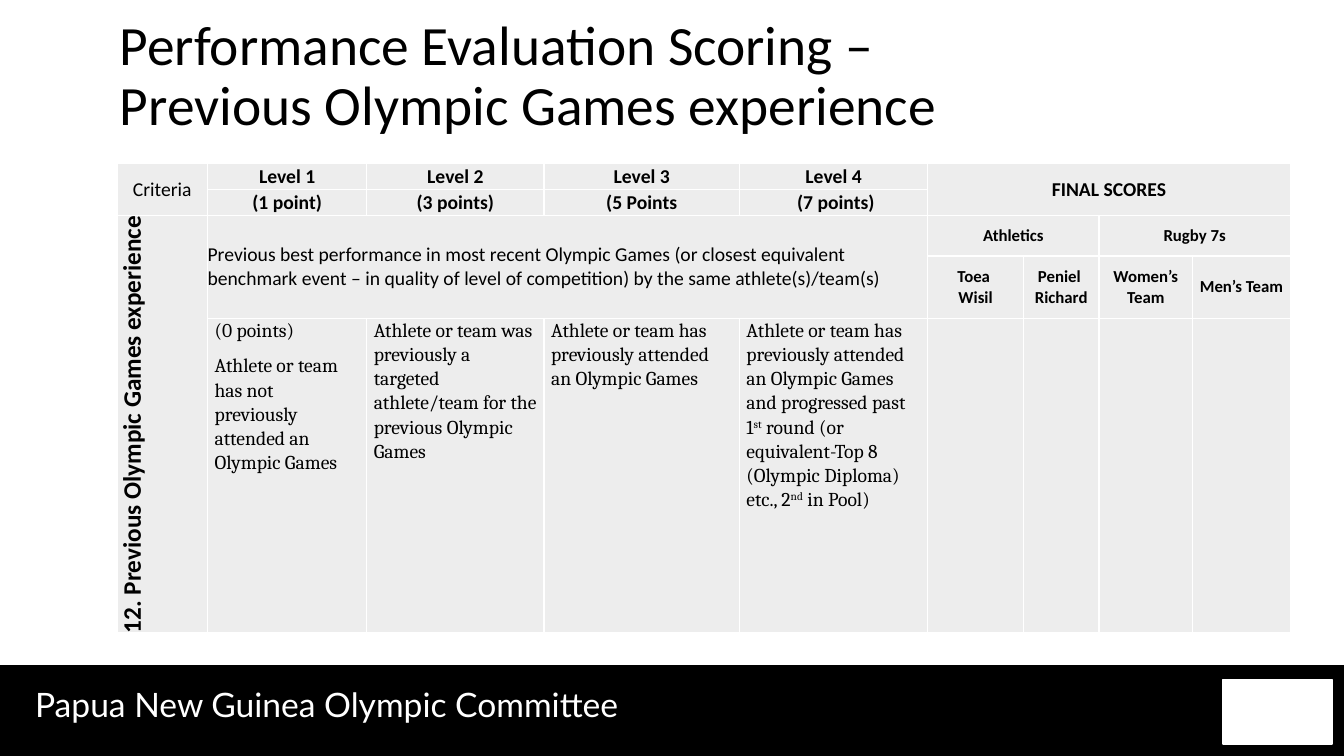
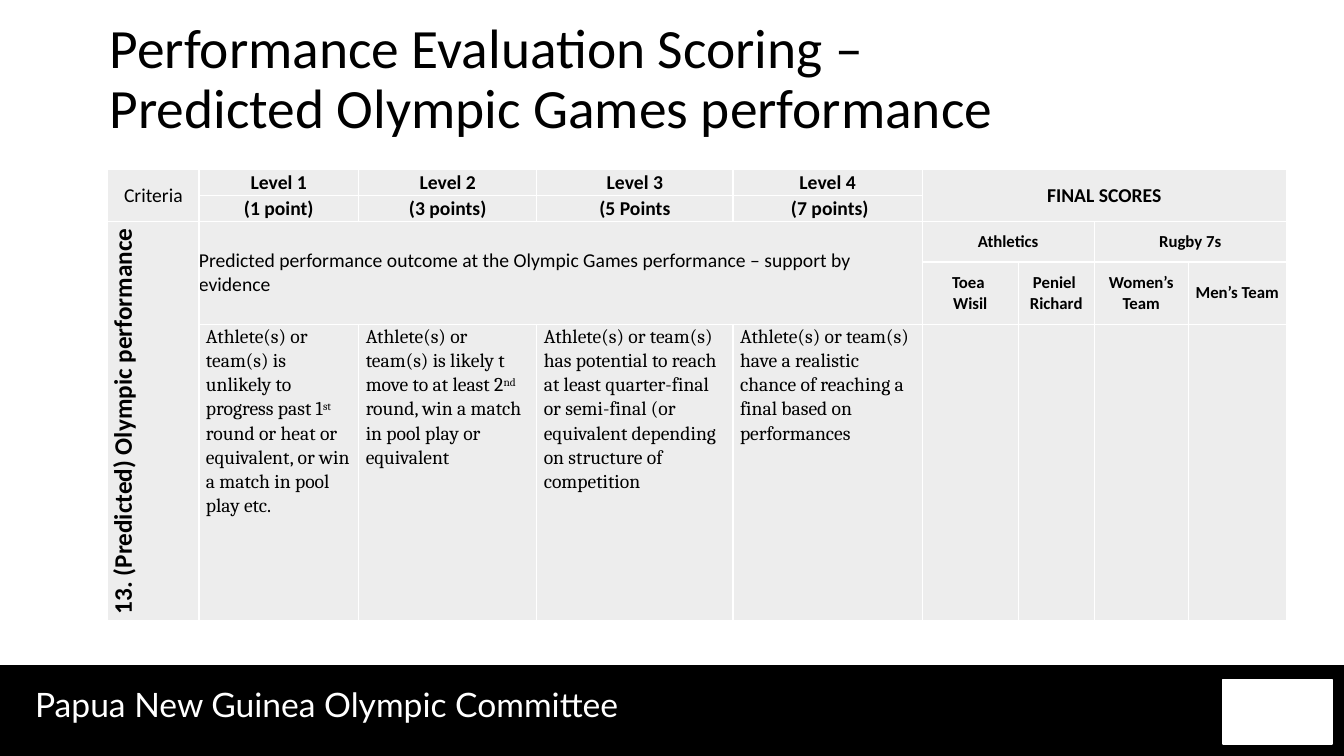
from lxml.etree import SubElement
from pptx import Presentation
from pptx.dml.color import RGBColor
from pptx.enum.shapes import MSO_SHAPE as Shape
from pptx.enum.text import MSO_ANCHOR as Anchor, PP_ALIGN as Align
from pptx.oxml.ns import qn
from pptx.util import Inches, Pt

COLORS = {"ink": "000000", "paper": "FFFFFF", "cell": "EDEDED"}
FOOTER_TEXT = "Papua New Guinea Olympic Committee"
TITLE_START = "Performance Evaluation Scoring – "

COLUMN_SHARES = [0.9, 1.58, 1.76, 1.94, 1.87, 0.95, 0.75, 0.93, 0.97]
ROW_HEIGHTS = [0.26, 0.26, 0.4, 0.62, 2.94]
LEVELS = [("Level 1", "(1 point)"), ("Level 2", "(3 points)"),
          ("Level 3", "(5 Points"), ("Level 4", " (7 points)")]
SPORTS = ["Athletics", "Rugby 7s"]
ENTRANTS = ["Toea \nWisil", "Peniel \nRichard", "Women’s Team", "Men’s Team"]

FLUSH_CELL = {"margin_left": 0, "margin_right": 0, "margin_top": 0, "margin_bottom": 0,
              "vertical_anchor": Anchor.MIDDLE}
LEVEL_CELL = {**FLUSH_CELL, "margin_left": Inches(0.07), "margin_right": Inches(0.07),
              "vertical_anchor": Anchor.TOP}
CENTERED = {"alignment": Align.CENTER}
LEVEL_PARAGRAPH = {"line_spacing": 1.07, "space_after": Pt(8)}

PLAIN = {"name": "Calibri", "size": Pt(14), "bold": False}
HEADING = {**PLAIN, "bold": True}
ENTRANT = {**HEADING, "size": Pt(12)}
CRITERION = {**HEADING, "size": Pt(18)}
LEVEL_TEXT = {**PLAIN, "name": "Cambria"}
TITLE_FONT = {"name": "Calibri", "size": Pt(39.6)}
FOOTER_FONT = {"name": "Lato", "size": Pt(24)}

# Level descriptions mark superscripts as ^st^.
SLIDES = [
    {
        "title": "Previous Olympic Games experience",
        "title_at": (1.09, 0.12),
        "table_at": (1.16, 1.62, 11.64),
        "criterion": "12. Previous Olympic Games experience",
        "question": "Previous best performance in most recent Olympic Games (or closest "
                    "equivalent benchmark event – in quality of level of competition) by the "
                    "same athlete(s)/team(s)",
        "levels": [
            "(0 points)\nAthlete or team has not previously attended an Olympic Games",
            "Athlete or team was previously a targeted athlete/team for the previous "
            "Olympic Games",
            "Athlete or team has previously attended an Olympic Games",
            "Athlete or team has previously attended an Olympic Games and progressed past "
            "1^st^ round (or equivalent-Top 8 (Olympic Diploma) etc., 2^nd^ in Pool)",
        ],
    },
    {
        "title": "Predicted Olympic Games performance",
        "title_at": (0.99, 0.15),
        "table_at": (1.07, 1.68, 11.69),
        "criterion": "13. (Predicted) Olympic performance",
        "question": "Predicted performance outcome at the Olympic Games performance – support "
                    "by evidence",
        "levels": [
            "Athlete(s) or team(s) is unlikely to progress past 1^st^ round or heat or "
            "equivalent, or win a match in pool play etc.",
            "Athlete(s) or team(s) is likely t move to at least 2^nd^ round, win a match in "
            "pool play or equivalent",
            "Athlete(s) or team(s) has potential to reach at least quarter-final or "
            "semi-final (or equivalent depending on structure of competition",
            "Athlete(s) or team(s) have a realistic chance of reaching a final based on "
            "performances",
        ],
    },
]


def rgb(color):
    return RGBColor.from_string(COLORS[color])


def apply_format(target, values):
    for attribute, value in values.items():
        setattr(target, attribute, value)


def write_text(frame, text, font, paragraph_format=None, color="ink"):
    """Fill a frame: one paragraph a line, vertical tabs as breaks, ^..^ as superscript."""
    for index, line in enumerate(text.split("\n")):
        paragraph = frame.add_paragraph() if index else frame.paragraphs[0]
        apply_format(paragraph, paragraph_format or {})
        for break_index, segment in enumerate(line.split("\v")):
            if break_index:
                paragraph.add_line_break()
            for part_index, part in enumerate(segment.split("^")):
                run = paragraph.add_run()
                run.text = part
                apply_format(run.font, font)
                run.font.color.rgb = rgb(color)
                if part_index % 2:
                    run._r.get_or_add_rPr().set("baseline", "30000")


def add_textbox(slide, box, anchor=Anchor.TOP):
    frame = slide.shapes.add_textbox(*map(Inches, box)).text_frame
    frame.word_wrap = True
    frame.vertical_anchor = anchor
    return frame


def add_block(slide, box, color):
    block = slide.shapes.add_shape(Shape.RECTANGLE, *map(Inches, box))
    block.shadow.inherit = False
    block.fill.solid()
    block.fill.fore_color.rgb = rgb(color)
    block.line.color.rgb = rgb(color)
    block.line.width = Pt(1)


def add_footer(slide, left=0, top=6.6, width=13.33, height=0.9):
    add_block(slide, (left, top, width, height), "ink")
    committee = add_textbox(slide, (left + 0.25, top + 0.14, 6.55, 0.5))
    write_text(committee, FOOTER_TEXT, FOOTER_FONT, color="paper")
    add_block(slide, (left + width - 1.2, top + 0.14, 1.08, 0.64), "paper")


def add_title(slide, title, left, top):
    frame = add_textbox(slide, (left, top, 10, 1.3), Anchor.MIDDLE)
    write_text(frame, f"{TITLE_START}\v{title}", TITLE_FONT, {"line_spacing": 0.9})


def style_cell(cell):
    """White borders come before the fill, as the schema orders them."""
    properties = cell._tc.get_or_add_tcPr()
    for side in ("lnL", "lnR", "lnT", "lnB"):
        border = SubElement(properties, qn(f"a:{side}"), w=str(Pt(1)))
        border_fill = SubElement(border, qn("a:solidFill"))
        SubElement(border_fill, qn("a:srgbClr"), val=COLORS["paper"])
    cell.fill.solid()
    cell.fill.fore_color.rgb = rgb("cell")
    apply_format(cell, FLUSH_CELL)


def add_scoring_table(slide, content, left, top, width):
    box = map(Inches, (left, top, width, sum(ROW_HEIGHTS)))
    table = slide.shapes.add_table(len(ROW_HEIGHTS), len(COLUMN_SHARES), *box).table
    apply_format(table, {"first_row": False, "horz_banding": False})
    for column, share in zip(table.columns, COLUMN_SHARES):
        column.width = Inches(width * share / sum(COLUMN_SHARES))
    for row, height in zip(table.rows, ROW_HEIGHTS):
        row.height = Inches(height)
    for cell in table.iter_cells():
        style_cell(cell)

    def put(row, column, text, font, paragraph_format=CENTERED, rows=1, columns=1):
        cell = table.cell(row, column)
        if rows * columns > 1:
            cell.merge(table.cell(row + rows - 1, column + columns - 1))
        write_text(cell.text_frame, text, font, paragraph_format)
        return cell

    put(0, 0, "Criteria", PLAIN, rows=2)
    put(0, 5, "FINAL SCORES", HEADING, rows=2, columns=4)
    criterion = put(2, 0, content["criterion"], CRITERION, rows=3)
    criterion._tc.get_or_add_tcPr().set("vert", "vert270")
    put(2, 1, content["question"], PLAIN, {}, rows=2, columns=4)
    for column, (level, description) in enumerate(zip(LEVELS, content["levels"]), 1):
        for row, label in enumerate(level):
            put(row, column, label, HEADING)
        apply_format(put(4, column, description, LEVEL_TEXT, LEVEL_PARAGRAPH), LEVEL_CELL)
    for index, sport in enumerate(SPORTS):
        put(2, 5 + 2 * index, sport, ENTRANT, columns=2)
    for column, entrant in enumerate(ENTRANTS, 5):
        put(3, column, entrant, ENTRANT)


def main():
    deck = Presentation()
    apply_format(deck, {"slide_width": Inches(13.33), "slide_height": Inches(7.5)})
    for content in SLIDES:
        slide = deck.slides.add_slide(deck.slide_layouts[6])
        add_footer(slide)
        add_title(slide, content["title"], *content["title_at"])
        add_scoring_table(slide, content, *content["table_at"])
    deck.save("out.pptx")


if __name__ == "__main__":
    main()
